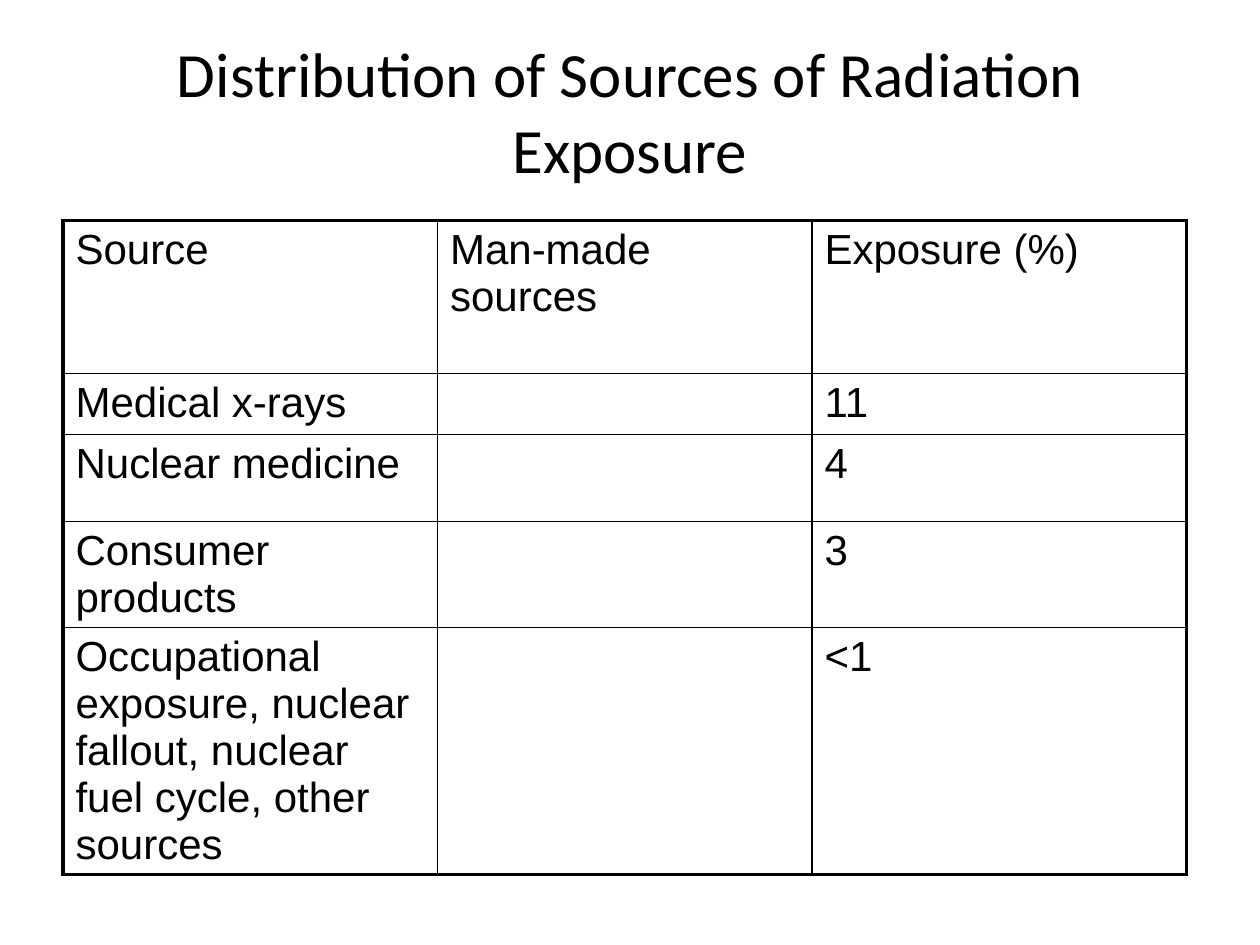
from lxml.etree import SubElement
from pptx import Presentation
from pptx.dml.color import RGBColor
from pptx.enum.text import MSO_ANCHOR, MSO_AUTO_SIZE, PP_ALIGN
from pptx.oxml.ns import qn
from pptx.util import Pt

BLACK = RGBColor(0x00, 0x00, 0x00)
OUTER_BORDER = 2.25
INNER_BORDER = 1

COLUMN_WIDTH = 214
ROW_HEIGHTS = [87.4, 34.8, 49.7, 60.6, 141]
EXPOSURE_ROWS = [
    ["Source", "Man-made sources", "Exposure (%)"],
    ["Medical x-rays", "", "11"],
    ["Nuclear medicine", "", "4"],
    ["Consumer products", "", "3"],
    ["Occupational exposure, nuclear fallout, nuclear fuel cycle, other sources", "", "<1"],
]


class SlideBuilder:
    title_font = "Calibri"
    table_font = "Arial"
    title_size = 36
    table_size = 24

    def __init__(self, presentation):
        self.slide = presentation.slides.add_slide(presentation.slide_layouts[5])

    def add_run(self, paragraph, text, font_name, size):
        run = paragraph.add_run()
        run.text = text
        run.font.name = font_name
        run.font.size = Pt(size)
        run.font.color.rgb = BLACK

    def add_title(self, text, left, top, width, height):
        title = self.slide.shapes.title
        title.left, title.top = Pt(left), Pt(top)
        title.width, title.height = Pt(width), Pt(height)
        frame = title.text_frame
        frame.word_wrap = True
        frame.auto_size = MSO_AUTO_SIZE.NONE
        frame.vertical_anchor = MSO_ANCHOR.MIDDLE
        paragraph = frame.paragraphs[0]
        paragraph.alignment = PP_ALIGN.CENTER
        self.add_run(paragraph, text, self.title_font, self.title_size)

    def add_border(self, cell, side, width):
        line = SubElement(cell._tc.get_or_add_tcPr(), qn(f"a:{side}"), w=str(Pt(width)))
        fill = SubElement(line, qn("a:solidFill"))
        SubElement(fill, qn("a:srgbClr"), val=str(BLACK))

    def add_table(self, rows, left, top, column_width, row_heights):
        row_count, column_count = len(rows), len(rows[0])
        table = self.slide.shapes.add_table(
            row_count, column_count, Pt(left), Pt(top),
            Pt(column_width * column_count), Pt(sum(row_heights)),
        ).table
        table.first_row = False
        table.horz_banding = False
        for column in table.columns:
            column.width = Pt(column_width)
        for row, height in zip(table.rows, row_heights):
            row.height = Pt(height)
        for row_index, texts in enumerate(rows):
            for column_index, text in enumerate(texts):
                cell = table.cell(row_index, column_index)
                outer_sides = {
                    "lnL": column_index == 0,
                    "lnR": column_index == column_count - 1,
                    "lnT": row_index == 0,
                    "lnB": row_index == row_count - 1,
                }
                for side, is_outer in outer_sides.items():
                    self.add_border(cell, side, OUTER_BORDER if is_outer else INNER_BORDER)
                cell.fill.background()
                if text:
                    paragraph = cell.text_frame.paragraphs[0]
                    self.add_run(paragraph, text, self.table_font, self.table_size)


def main():
    presentation = Presentation()
    presentation.slide_width, presentation.slide_height = Pt(720), Pt(540)
    builder = SlideBuilder(presentation)
    builder.add_title("Distribution of Sources of Radiation Exposure", 36, 18, 648, 90)
    builder.add_table(EXPOSURE_ROWS, 36, 126, COLUMN_WIDTH, ROW_HEIGHTS)
    presentation.save("out.pptx")


if __name__ == "__main__":
    main()
